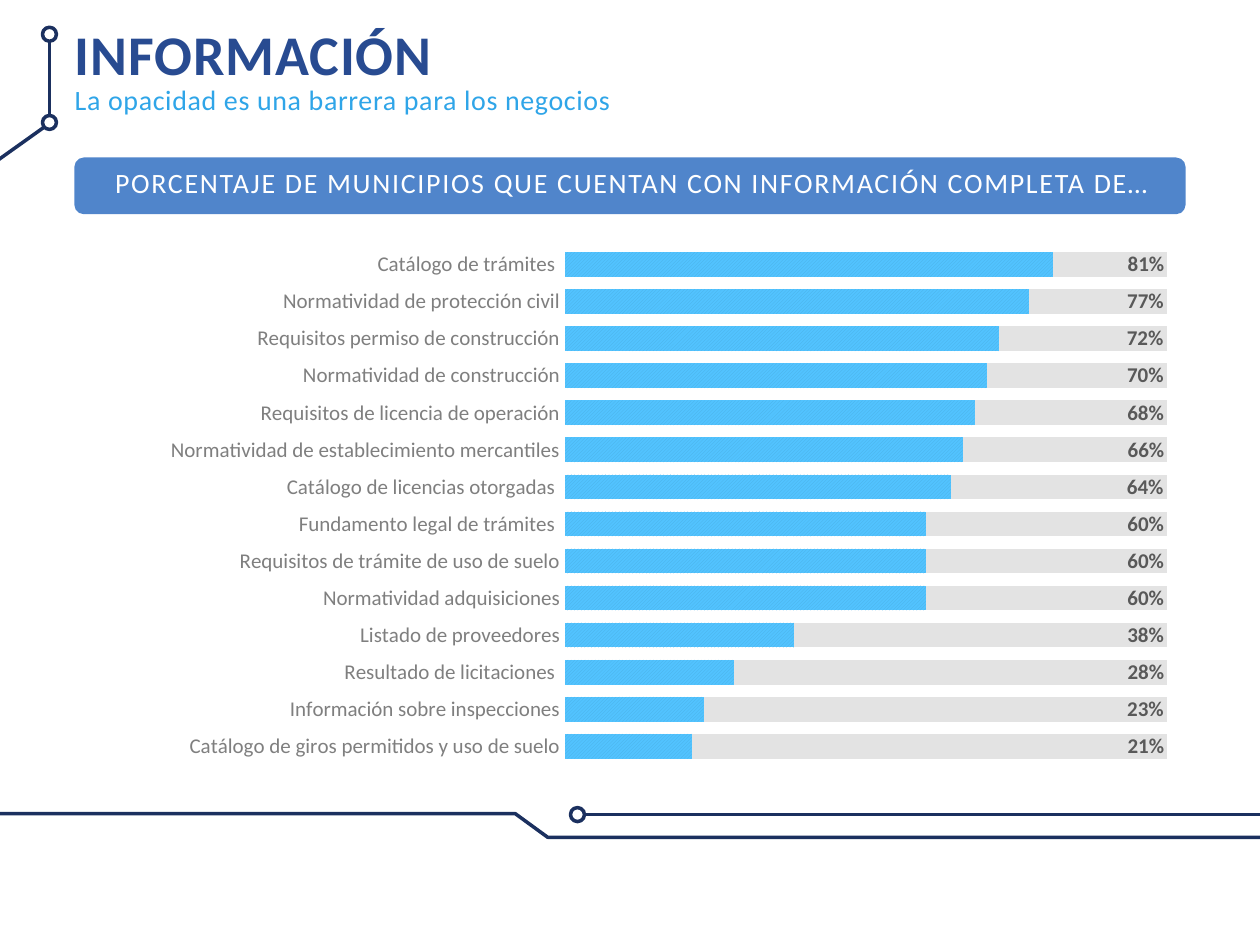
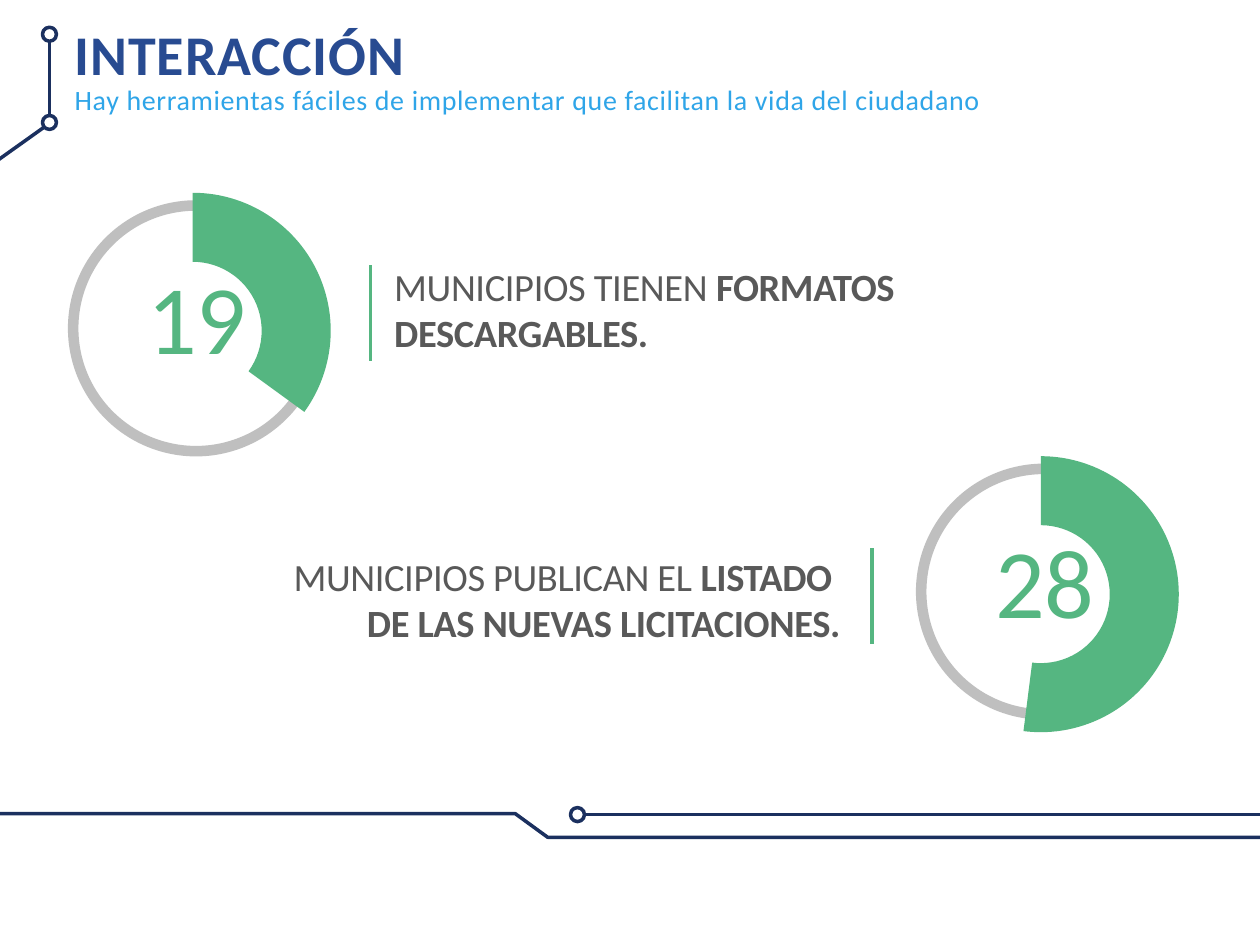
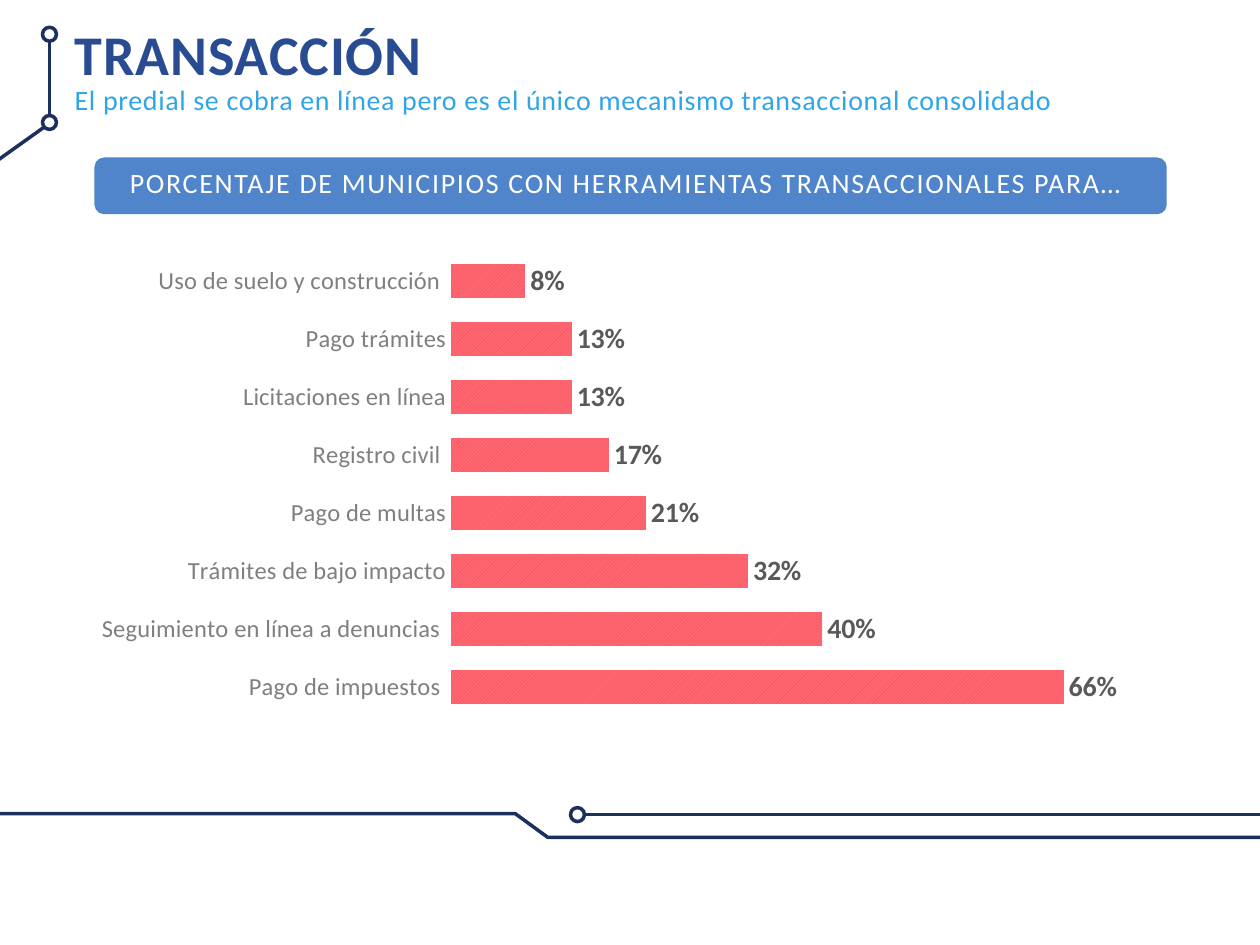
import pptx
import pptx.util
import pptx.chart.data
import pptx.dml.color
import pptx.enum.chart
import pptx.enum.dml
import pptx.enum.shapes
import pptx.enum.text
import pptx.oxml
import pptx.oxml.ns

Pt = pptx.util.Pt
RGB = pptx.dml.color.RGBColor
KIND = pptx.enum.chart.XL_CHART_TYPE
SPOT = pptx.enum.chart.XL_LABEL_POSITION
FORM = pptx.enum.shapes.MSO_SHAPE
ALIGN = pptx.enum.text.PP_ALIGN

FONT = "Calibri"
WIDE, HIGH = 720, 540
NAVY = RGB(0x1B, 0x30, 0x5F)
BLUE = RGB(0x28, 0x4B, 0x91)
SKY = RGB(0x2F, 0xA5, 0xE8)
BAND = RGB(0x50, 0x85, 0xCB)
WHITE = RGB(0xFF, 0xFF, 0xFF)
BLACK = RGB(0, 0, 0)
DARK = RGB(0x59, 0x59, 0x59)
GRAY = RGB(0x7F, 0x7F, 0x7F)
RING = RGB(0xBF, 0xBF, 0xBF)
PALE = RGB(0xE3, 0xE3, 0xE3)
GREEN = RGB(0x55, 0xB6, 0x81)
AQUA = RGB(0x52, 0xC3, 0xFF), RGB(0x4A, 0xAF, 0xE4)
ROSE = RGB(0xFF, 0x68, 0x71), RGB(0xEB, 0x47, 0x5B)

INFO = [
    ("Catálogo de giros permitidos y uso de suelo", 0.21),
    ("Información sobre inspecciones", 0.23),
    ("Resultado de licitaciones ", 0.28),
    ("Listado de proveedores", 0.38),
    ("Normatividad adquisiciones", 0.6),
    (" Requisitos de trámite de uso de suelo", 0.6),
    ("Fundamento legal de trámites ", 0.6),
    ("Catálogo de licencias otorgadas ", 0.64),
    ("Normatividad de establecimiento mercantiles", 0.66),
    ("Requisitos de licencia de operación", 0.68),
    ("Normatividad de construcción", 0.7),
    ("Requisitos permiso de construcción", 0.72),
    ("Normatividad de protección civil", 0.77),
    ("Catálogo de trámites ", 0.81),
]
TRADE = [
    ("Pago de impuestos ", 0.66),
    ("Seguimiento en línea a denuncias ", 0.4),
    ("Trámites de bajo impacto", 0.32),
    ("Pago de multas", 0.21),
    ("Registro civil ", 0.17),
    ("Licitaciones en línea", 0.13),
    ("Pago trámites", 0.13),
    ("Uso de suelo y construcción ", 0.08),
]


# Basic parts
def pts(*nums):
    return [Pt(num) for num in nums]


def write(slide, box, lines, size, color, gap, align=ALIGN.LEFT, wrap=True, lead=None):
    """Each line is a list of (text, bold) runs; gap is the letter spacing."""
    frame = slide.shapes.add_textbox(*pts(*box)).text_frame
    frame.word_wrap = wrap
    frame.auto_size = pptx.enum.text.MSO_AUTO_SIZE.SHAPE_TO_FIT_TEXT
    for num, line in enumerate(lines):
        para = frame.add_paragraph() if num else frame.paragraphs[0]
        para.alignment = align
        para.line_spacing = lead
        for text, bold in line:
            run = para.add_run()
            run.text = text
            font = run.font
            font.name, font.size, font.bold = FONT, Pt(size), bold
            font.color.rgb = color
            run._r.get_or_add_rPr().set("spc", str(round(gap * 100)))


def rule(slide, start, end, color):
    kind = pptx.enum.shapes.MSO_CONNECTOR.STRAIGHT
    line = slide.shapes.add_connector(kind, *pts(*start, *end))
    line.line.color.rgb = color
    line.line.width = Pt(2)
    props = line.element.spPr
    props.append(props.makeelement(pptx.oxml.ns.qn("a:effectLst"), {}))


def circle(slide, mid, size, color, width, fill=None):
    x, y = mid
    shape = slide.shapes.add_shape(
        FORM.OVAL, *pts(x - size / 2, y - size / 2, size, size))
    shape.shadow.inherit = False
    shape.line.color.rgb = color
    shape.line.width = Pt(width)
    if fill is None:
        shape.fill.background()
    else:
        shape.fill.solid()
        shape.fill.fore_color.rgb = fill


# Circuit lines and heading found on every slide
def frame(slide):
    path = [(-49, 484), (-23, 465), (294.5, 465), (313, 478.5), (736, 478.5)]
    form = slide.shapes.build_freeform(*pts(*path[0]), scale=1.0)
    form.add_line_segments([pts(*spot) for spot in path[1:]], close=False)
    trace = form.convert_to_shape()
    trace.shadow.inherit = False
    trace.fill.background()
    trace.line.color.rgb = NAVY
    trace.line.width = Pt(2)
    rule(slide, (334, 465.5), (WIDE, 465.5), NAVY)
    circle(slide, (330, 465.5), 8, NAVY, 2)
    circle(slide, (28.3, 70), 8, NAVY, 2)
    circle(slide, (28.3, 19.6), 8, NAVY, 2, WHITE)
    rule(slide, (28.3, 23.6), (28.3, 66), NAVY)
    rule(slide, (25.2, 72.7), (-17.3, 103), NAVY)


def head(slide, title, wide, sub, long):
    write(slide, (35.6, 12, wide, 42.5), [[(title, True)]], 32, BLUE, 0.5,
          wrap=False, lead=0.9)
    write(slide, (35.6, 46, long, 25), [[(sub, False)]], 16, SKY, 0.4,
          wrap=False, lead=0.9)


def banner(slide, x, wide, text, mid):
    bar = slide.shapes.add_shape(FORM.ROUNDED_RECTANGLE, *pts(x, 90, wide, 32.4))
    bar.shadow.inherit = False
    bar.fill.solid()
    bar.fill.fore_color.rgb = BAND
    bar.line.fill.background()
    write(slide, (mid - 327.6, 91, 655.2, 26.6), [[(text, False)]], 16, WHITE, 1,
          ALIGN.CENTER)


# Charts
def layout(**marks):
    tags = "".join(f'<c:{tag} val="{val}"/>' for tag, val in marks.items())
    space = pptx.oxml.ns.nsdecls("c")
    return pptx.oxml.parse_xml(
        f"<c:layout {space}><c:manualLayout>{tags}</c:manualLayout></c:layout>")


def plot(slide, box, kind, names, rows, area, size):
    """Add a bare chart; area is the inner plot as shares of the box."""
    data = pptx.chart.data.CategoryChartData(
        number_format="General" if kind == KIND.DOUGHNUT else "0%")
    data.categories = names
    for num, row in enumerate(rows, 1):
        data.add_series(f"Series {num}", row)
    chart = slide.shapes.add_chart(kind, *pts(*box), data).chart
    chart.has_legend = chart.has_title = False
    chart.font.name, chart.font.size = FONT, Pt(size)
    chart.font.color.rgb = BLACK
    zone = next(chart.element.iter(pptx.oxml.ns.qn("c:plotArea")))
    for old in zone.findall(pptx.oxml.ns.qn("c:layout")):
        zone.remove(old)
    x, y, w, h = area
    zone.insert(0, layout(layoutTarget="inner", xMode="edge", yMode="edge",
                          x=x, y=y, w=w, h=h))
    return chart


def bars(slide, box, kind, pairs, rest, area, look, gap, top, sizes):
    names, vals = zip(*pairs)
    rows = [vals]
    if rest:
        rows.append([round(1 - val, 2) for val in vals])
    chart = plot(slide, box, kind, names, rows, area, sizes[1])
    cat, axis = chart.category_axis, chart.value_axis
    cat.major_tick_mark = pptx.enum.chart.XL_TICK_MARK.NONE
    cat.format.line.fill.background()
    font = cat.tick_labels.font
    font.name, font.size = FONT, Pt(sizes[0])
    font.color.rgb = GRAY
    axis.visible = axis.has_major_gridlines = False
    axis.minimum_scale, axis.maximum_scale = 0, top

    group = chart.plots[0]
    group.gap_width = gap
    group.vary_by_categories = False
    for row in group.series:
        row.invert_if_negative = False
    first = group.series[0]
    fill = first.format.fill
    fill.patterned()
    fill.pattern = pptx.enum.dml.MSO_PATTERN.DARK_UPWARD_DIAGONAL
    fill.back_color.rgb, fill.fore_color.rgb = look
    marks = first.data_labels
    marks.show_value = True
    marks.number_format, marks.number_format_is_linked = "0%", False
    bold(marks.font, sizes[1])
    if rest:
        group.overlap = 100
        other = group.series[1].format.fill
        other.solid()
        other.fore_color.rgb = PALE
        align(chart, first, vals, area)
    else:
        marks.position = SPOT.OUTSIDE_END


def bold(font, size):
    font.name, font.size, font.bold = FONT, Pt(size), True
    font.color.rgb = DARK


def align(chart, row, vals, area):
    """Move each label from the middle of its bar to one right-hand column."""
    for num in range(len(vals)):
        mark = row.points[num].data_label
        mark.position = SPOT.CENTER
        bold(mark.font, 12)
    left, _, wide, _ = area
    column = 0.979
    for mark, val in zip(chart.element.iter(pptx.oxml.ns.qn("c:dLbl")), vals):
        shift = column - left - wide * val / 2
        mark.insert(1, layout(x=round(shift, 3), y=0))
    # Moved labels get no leader lines
    for lead in chart.element.iter(pptx.oxml.ns.qn("c:showLeaderLines")):
        lead.set("val", "0")


def gauge(slide, x, y, share, count):
    circle(slide, (x + 115.6, y + 89), 140.4, RING, 6)
    chart = plot(slide, (x, y, 227.5, 184.3), KIND.DOUGHNUT, ["1", "2"],
                 [(share, 100 - share)], (0.08, 0.063, 1.0, 0.856), 18)
    next(chart.element.iter(pptx.oxml.ns.qn("c:holeSize"))).set("val", "80")
    row = chart.plots[0].series[0]
    part, void = row.points[0].format, row.points[1].format
    part.fill.solid()
    part.fill.fore_color.rgb = GREEN
    void.fill.background()
    for item in (part, void):
        item.line.fill.background()
    write(slide, (x + 80.6, y + 44.6, 71.3, 75), [[(count, False)]], 56, GREEN, -0.3,
          ALIGN.CENTER, wrap=False)


def note(slide, x, y, lines, side, dx, dy):
    write(slide, (x, y, 486.7, 60.5), lines, 22, DARK, -0.2, side)
    rule(slide, (x + dx, y + dy), (x + dx, y + dy + 54.7), GREEN)


# Slides
def inform(slide):
    frame(slide)
    head(slide, "INFORMACIÓN", 221, "La opacidad es una barrera para los negocios", 328.3)
    banner(slide, 42.5, 635,
           "PORCENTAJE DE MUNICIPIOS QUE CUENTAN CON INFORMACIÓN COMPLETA DE…", 361.4)
    bars(slide, (67.4, 127.8, 599.8, 311.8), KIND.BAR_STACKED_100, INFO, True,
         (0.426, 0.041, 0.574, 0.951), AQUA, 50, 1, (12, 12))


def engage(slide):
    frame(slide)
    head(slide, "INTERACCIÓN", 205.2,
         "Hay herramientas fáciles de implementar que facilitan la vida del ciudadano", 550)
    note(slide, 218.2, 146.5,
         [[("MUNICIPIOS TIENEN ", False), ("FORMATOS", True)], [("DESCARGABLES.", True)]],
         ALIGN.LEFT, -6.5, 5)
    note(slide, 0.7, 312.5,
         [[("MUNICIPIOS PUBLICAN EL ", False), ("LISTADO ", True)],
          [("DE LAS NUEVAS LICITACIONES.", True)]],
         ALIGN.RIGHT, 497.5, 0.7)
    gauge(slide, -3.6, 98.6, 35, "19")
    gauge(slide, 481, 249.1, 52, "28")


def trade(slide):
    frame(slide)
    head(slide, "TRANSACCIÓN", 215.3,
         "El predial se cobra en línea pero es el único mecanismo transaccional consolidado",
         582.5)
    banner(slide, 54, 612.7,
           "PORCENTAJE DE MUNICIPIOS CON HERRAMIENTAS TRANSACCIONALES PARA…", 357.8)
    bars(slide, (49.7, 131, 599.8, 325.4), KIND.BAR_CLUSTERED, TRADE, False,
         (0.347, 0.04, 0.619, 0.815), ROSE, 70, 0.7, (14, 16))


def main():
    deck = pptx.Presentation()
    deck.slide_width, deck.slide_height = pts(WIDE, HIGH)
    for build in (inform, engage, trade):
        build(deck.slides.add_slide(deck.slide_layouts[6]))
    deck.save("out.pptx")


if __name__ == "__main__":
    main()
